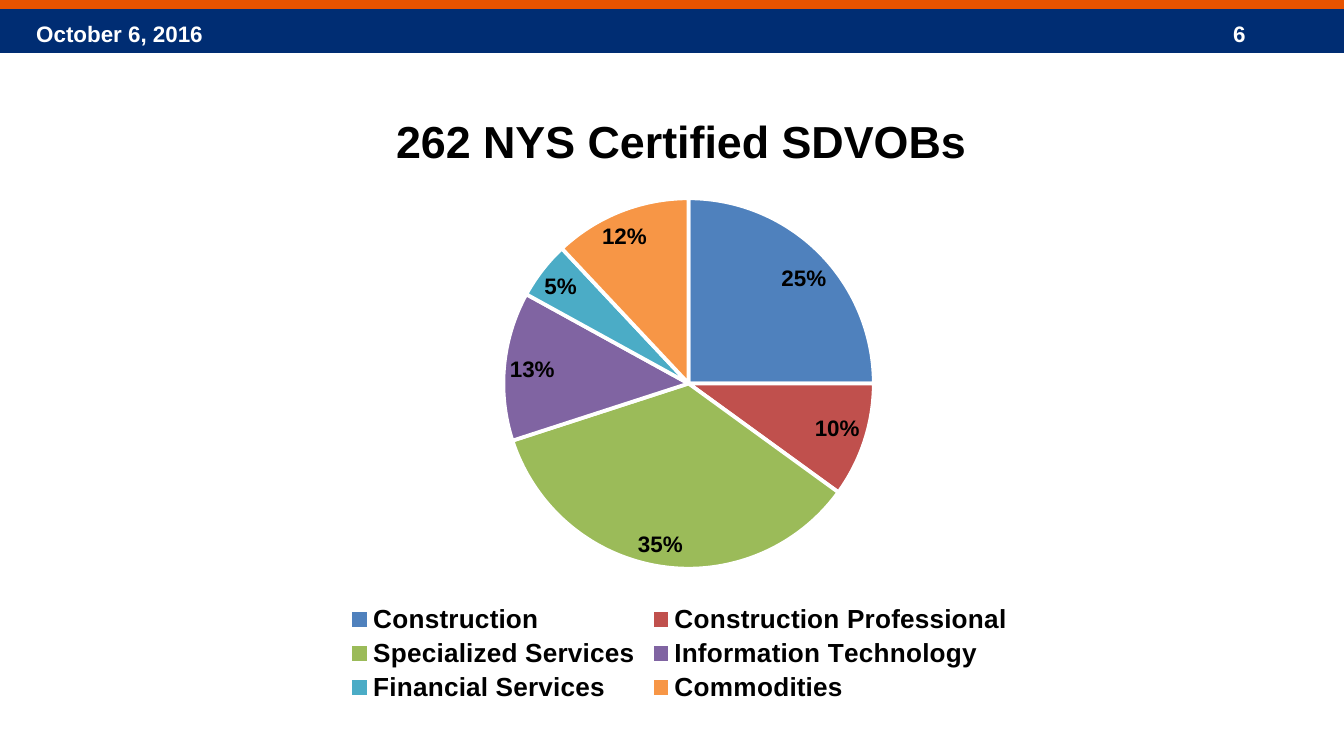
import pptx
import pptx.chart.data
import pptx.dml.color
import pptx.enum.chart
import pptx.enum.shapes
import pptx.enum.text
import pptx.oxml
import pptx.oxml.ns
import pptx.util

RGB = pptx.dml.color.RGBColor
NAVY = RGB(0x00, 0x2D, 0x73)
ORANGE = RGB(0xE7, 0x53, 0x00)
WHITE = RGB(0xFF, 0xFF, 0xFF)
BLACK = RGB(0x00, 0x00, 0x00)
FONT = "Arial"
SCALE = 6804  # EMU per px

SHARES = [
    ("Construction", 0.25, RGB(0x4F, 0x81, 0xBD)),
    ("Construction Professional", 0.10, RGB(0xC0, 0x50, 0x4D)),
    ("Specialized Services", 0.35, RGB(0x9B, 0xBB, 0x59)),
    ("Information Technology", 0.13, RGB(0x80, 0x64, 0xA2)),
    ("Financial Services", 0.05, RGB(0x4B, 0xAC, 0xC6)),
    ("Commodities", 0.12, RGB(0xF7, 0x96, 0x46)),
]


def px(*sizes):
    return [pptx.util.Emu(size * SCALE) for size in sizes]


def style(font, size, color):
    font.name = FONT
    font.size = pptx.util.Pt(size)
    font.bold = True
    font.color.rgb = color


def band(slide, box, color):
    kind = pptx.enum.shapes.MSO_SHAPE.RECTANGLE
    shape = slide.shapes.add_shape(kind, *px(*box))
    shape.shadow.inherit = False
    shape.fill.solid()
    shape.fill.fore_color.rgb = color
    shape.line.fill.background()


def label(slide, box, text):
    frame = slide.shapes.add_textbox(*px(*box)).text_frame
    frame.word_wrap = True
    frame.vertical_anchor = pptx.enum.text.MSO_ANCHOR.MIDDLE
    frame.text = text
    style(frame.paragraphs[0].runs[0].font, 12, WHITE)


def header(slide, box, date, number):
    left, top, width, height = box
    band(slide, (left, top + 12, width, height - 12), NAVY)
    label(slide, (left + 23, top + 16, 313, 40), date)
    label(slide, (left + width - 124, top + 16, 101, 40), number)
    band(slide, (left, top, width, 12), ORANGE)


def arrange(part, **places):
    """Fix a chart part's layout, as fractions of the chart."""
    qn = pptx.oxml.ns.qn
    for old in part.findall(qn("c:layout")):
        part.remove(old)
    modes = "".join(f'<c:{key}Mode val="edge"/>' for key in "xy")
    if "target" in places:
        modes = f'<c:layoutTarget val="{places.pop("target")}"/>' + modes
    sizes = "".join(f'<c:{key} val="{val}"/>' for key, val in places.items())
    layout = pptx.oxml.parse_xml(
        f'<c:layout {pptx.oxml.ns.nsdecls("c")}>'
        f"<c:manualLayout>{modes}{sizes}</c:manualLayout></c:layout>"
    )
    overlay = part.find(qn("c:overlay"))
    if overlay is None:
        part.insert(0, layout)
    else:
        overlay.addprevious(layout)


def pie(slide, box, title):
    data = pptx.chart.data.CategoryChartData(number_format="0%")
    names, values, colors = zip(*SHARES)
    data.categories = names
    data.add_series("Series 1", values)
    enum = pptx.enum.chart
    chart = slide.shapes.add_chart(
        enum.XL_CHART_TYPE.PIE, *px(*box), data
    ).chart
    chart.font.name = "Calibri"
    chart.font.size = pptx.util.Pt(10)
    chart.font.color.rgb = BLACK

    chart.has_title = True
    head = chart.chart_title
    head.include_in_layout = False
    head.text_frame.text = title
    style(head.text_frame.paragraphs[0].runs[0].font, 24, BLACK)
    arrange(head._element, x=0.18, y=0.04)

    chart.has_legend = True
    legend = chart.legend
    legend.position = enum.XL_LEGEND_POSITION.BOTTOM
    legend.include_in_layout = False
    style(legend.font, 14, BLACK)
    arrange(legend._element, x=0.13, y=0.83, w=0.74, h=0.17)

    plot = chart.plots[0]
    plot.vary_by_categories = True
    area = chart._chartSpace.chart.plotArea
    arrange(area, target="inner", x=0.05, y=0.19, w=0.92, h=0.59)
    series = plot.series[0]
    for index, color in enumerate(colors):
        form = series.points[index].format
        form.fill.solid()
        form.fill.fore_color.rgb = color
        form.line.color.rgb = WHITE
        form.line.width = pptx.util.Pt(2)

    labels = series.data_labels
    labels.show_value = True
    labels.number_format = "0%"
    labels.number_format_is_linked = False
    labels.position = enum.XL_LABEL_POSITION.BEST_FIT
    style(labels.font, 12, BLACK)


def main():
    deck = pptx.Presentation()
    deck.slide_width, deck.slide_height = px(1344, 756)
    slide = deck.slides.add_slide(deck.slide_layouts[6])
    header(slide, (0, -3, 1344, 56), "October 6, 2016", "6")
    pie(slide, (224, 79, 911, 628), "262 NYS Certified SDVOBs")
    deck.save("out.pptx")


if __name__ == "__main__":
    main()
